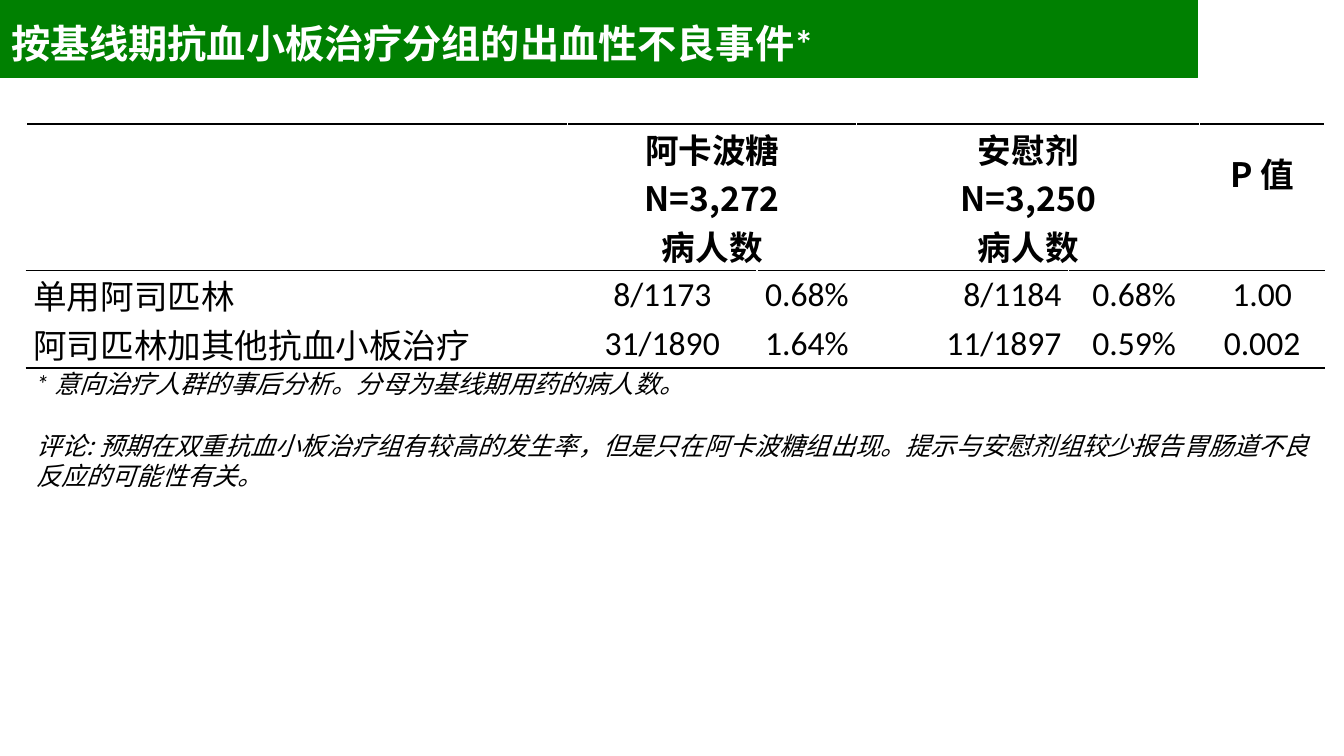
from lxml import etree
from pptx import Presentation
from pptx.dml.color import RGBColor
from pptx.enum.shapes import MSO_SHAPE
from pptx.enum.text import MSO_ANCHOR, MSO_AUTO_SIZE, PP_ALIGN
from pptx.oxml.ns import qn
from pptx.util import Inches, Pt

RECT = MSO_SHAPE.RECTANGLE
MIDDLE = MSO_ANCHOR.MIDDLE
GROW = MSO_AUTO_SIZE.SHAPE_TO_FIT_TEXT
LEFT, CENTER, RIGHT = PP_ALIGN.LEFT, PP_ALIGN.CENTER, PP_ALIGN.RIGHT
GREEN = RGBColor(0, 128, 1)
BLACK = RGBColor(0, 0, 0)
WHITE = RGBColor(255, 255, 255)
HAN, LATIN = "Noto Sans CJK SC", "Calibri"
WIDE, HIGH = Inches(13.33), Inches(7.5)

TITLE = "按基线期抗血小板治疗分组的出血性不良事件"
NOTE = "意向治疗人群的事后分析。分母为基线期用药的病人数。"
REMARK = ("评论: 预期在双重抗血小板治疗组有较高的发生率，但是只在阿卡波糖组出现。"
          "提示与安慰剂组较少报告胃肠道不良反应的可能性有关。")
COLS = [40.28, 14.1, 7.43, 15.75, 9.75, 9.3]
ROWS = [12.95, 6.45, 6.45, 6.45]
HEADS = [
    ["", "阿卡波糖\nN=3,272", "", "安慰剂\nN=3,250", "", "P 值"],
    ["", "病人数", "", "病人数", "", ""],
]
EVENTS = [
    ["单用阿司匹林", "8/1173", "0.68%", "8/1184", "0.68%", "1.00"],
    ["阿司匹林加其他抗血小板治疗", "31/1890", "1.64%", "11/1897", "0.59%", "0.002"],
]
ALIGNS = [LEFT, CENTER, CENTER, RIGHT, CENTER, CENTER]
RULES = {(0, "T"): 1, (1, "B"): 1.5, (2, "T"): 1.5, (3, "B"): 1}


def across(share):
    """Turn a percentage of the slide width into a length."""
    return int(WIDE * share / 100)


def down(share):
    """Turn a percentage of the slide height into a length."""
    return int(HIGH * share / 100)


def area(x, y, w, h):
    """Turn percentages of the slide into a position and size."""
    return across(x), down(y), across(w), down(h)


def style(para, size, color, name=HAN, bold=False, italic=False):
    """Set the font of a whole paragraph."""
    font = para.font
    font.size, font.bold, font.italic = Pt(size), bold, italic
    font.color.rgb = color
    font.name = name
    props = para._p.get_or_add_pPr().find(qn("a:defRPr"))
    etree.SubElement(props, qn("a:ea"), typeface=HAN)


def add_run(para, text, name):
    """Append text in the named font."""
    run = para.add_run()
    run.text = text
    run.font.name = name


def add_title(slide):
    """Draw the green bar with the title on top of it."""
    bar = slide.shapes.add_shape(RECT, *area(0, 0, 89.12, 10.27))
    bar.shadow.inherit = False
    bar.fill.solid()
    bar.fill.fore_color.rgb = bar.line.color.rgb = GREEN
    bar.line.width = Pt(1)
    title = slide.shapes.title
    bar._element.addnext(title._element)
    title.left, title.top, title.width, title.height = area(0.08, 1.87, 100, 7.6)
    frame = title.text_frame
    frame.auto_size, frame.vertical_anchor = GROW, MIDDLE
    para = frame.paragraphs[0]
    para.alignment = LEFT
    style(para, 28, WHITE, bold=True)
    add_run(para, TITLE, HAN)
    add_run(para, "*", LATIN)


def add_edges(cell, row):
    """Draw the four borders of a cell."""
    props = cell._tc.get_or_add_tcPr()
    for spot, side in enumerate("LRTB"):
        width = RULES.get((row, side))
        color = BLACK if width else WHITE
        line = etree.Element(qn(f"a:ln{side}"), w=str(Pt(width or 1)))
        fill = etree.SubElement(line, qn("a:solidFill"))
        etree.SubElement(fill, qn("a:srgbClr"), val=str(color))
        props.insert(spot, line)


def fill_cell(cell, text, row, col):
    """Fill a cell and format its text."""
    cell.fill.solid()
    cell.fill.fore_color.rgb = WHITE
    add_edges(cell, row)
    cell.vertical_anchor = MIDDLE
    cell.margin_left = cell.margin_right = Inches(0.07)
    cell.margin_top = cell.margin_bottom = 0
    if not text:
        return
    head = row < len(HEADS)
    cell.text_frame.text = text
    for para in cell.text_frame.paragraphs:
        para.alignment = CENTER if head else ALIGNS[col]
        style(para, 24, BLACK, HAN if head or col == 0 else LATIN, bold=head)


def add_grid(slide):
    """Add the table of bleeding events."""
    spot = area(1.95, 16.4, sum(COLS), sum(ROWS))
    table = slide.shapes.add_table(len(ROWS), len(COLS), *spot).table
    table.first_row = table.horz_banding = False
    for col, share in zip(table.columns, COLS):
        col.width = across(share)
    for row, share in zip(table.rows, ROWS):
        row.height = down(share)
    for row, texts in enumerate(HEADS + EVENTS):
        for col, text in enumerate(texts):
            fill_cell(table.cell(row, col), text, row, col)
    for row in range(len(HEADS)):
        for col in (1, 3):
            table.cell(row, col).merge(table.cell(row, col + 1))


def add_notes(slide):
    """Add the footnote and the remark below the table."""
    frame = slide.shapes.add_textbox(*area(1.95, 48.13, 96.62, 17.47)).text_frame
    frame.word_wrap, frame.auto_size = True, GROW
    note, remark = frame.paragraphs[0], frame.add_paragraph()
    remark.space_before = Pt(22)
    for para in (note, remark):
        style(para, 18, BLACK, italic=True)
    add_run(note, "* ", LATIN)
    add_run(note, NOTE, HAN)
    add_run(remark, REMARK, HAN)


def main():
    """Build the slide and save it."""
    deck = Presentation()
    deck.slide_width, deck.slide_height = WIDE, HIGH
    slide = deck.slides.add_slide(deck.slide_layouts[5])
    add_title(slide)
    add_grid(slide)
    add_notes(slide)
    deck.save("out.pptx")


if __name__ == "__main__":
    main()
